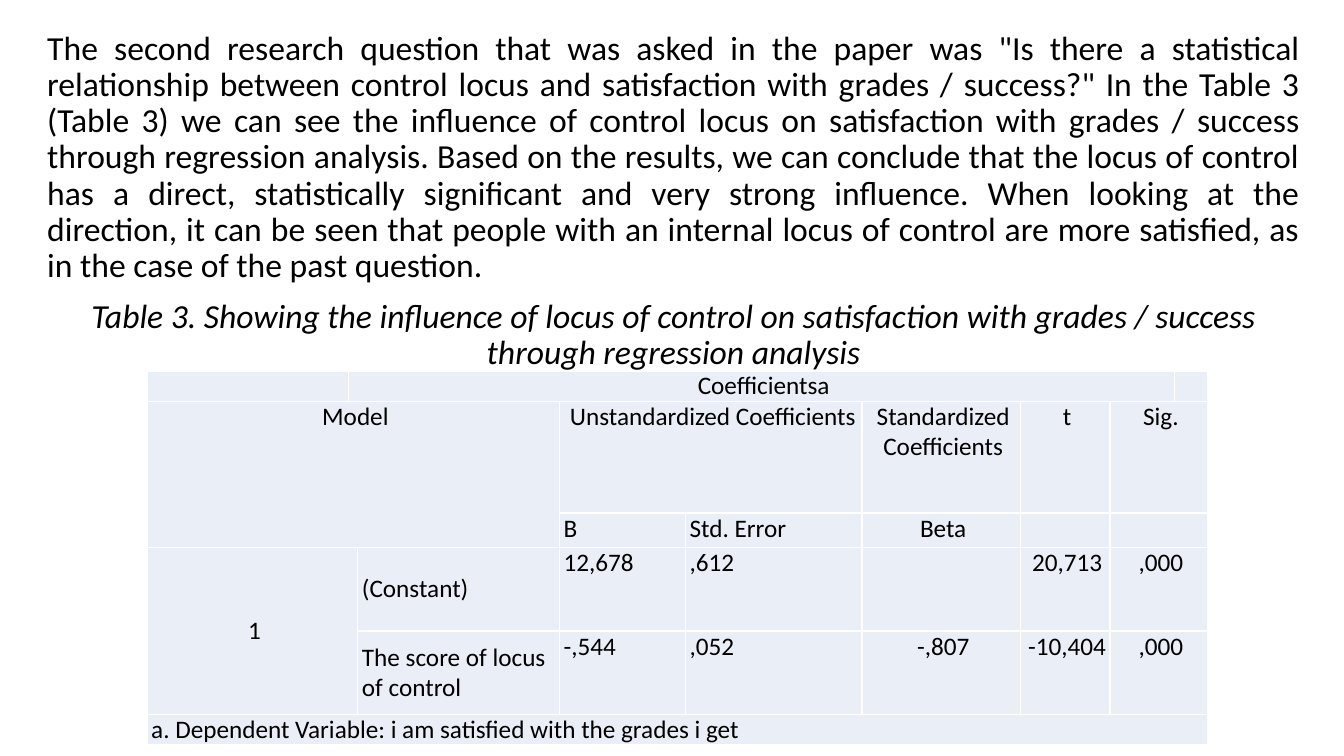
import pptx
import pptx.util
import pptx.dml.color
import pptx.enum.text
import pptx.oxml.ns
import lxml.etree

QUESTION = (
    'The second research question that was asked in the paper was "Is there a statistical '
    'relationship between control locus and satisfaction with grades / success?" In the Table 3 '
    '(Table 3) we can see the influence of control locus on satisfaction with grades / success '
    'through regression analysis. Based on the results, we can conclude that the locus of control '
    'has a direct, statistically significant and very strong influence. When looking at the '
    'direction, it can be seen that people with an internal locus of control are more satisfied, '
    'as in the case of the past question.'
)
CAPTION = (
    "Table 3. Showing the influence of locus of control on satisfaction with grades / success "
    "through regression analysis"
)
COLUMNS = [2, 0.09, 2, 1.25, 1.75, 1.57, 0.89, 0.64, 0.33]
ROWS = [0.25, 1.11, 0.34, 0.83, 0.83, 0.28]

# row, column: text, alignment, vertical anchor
COEFFICIENTS = {
    (0, 1): ("Coefficientsa", "CENTER", "TOP"),
    (1, 0): ("Model", "CENTER", "TOP"),
    (1, 3): ("Unstandardized Coefficients", "CENTER", "TOP"),
    (1, 5): ("Standardized Coefficients", "CENTER", "TOP"),
    (1, 6): ("t", "CENTER", "TOP"),
    (1, 7): ("Sig.", "CENTER", "TOP"),
    (2, 3): ("B", "LEFT", "TOP"),
    (2, 4): ("Std. Error", "LEFT", "TOP"),
    (2, 5): ("Beta", "CENTER", "TOP"),
    (3, 0): ("1", "CENTER", "MIDDLE"),
    (3, 2): ("(Constant)", "LEFT", "MIDDLE"),
    (3, 3): ("12,678", "LEFT", "TOP"),
    (3, 4): (",612", "LEFT", "TOP"),
    (3, 6): ("20,713", "CENTER", "TOP"),
    (3, 7): (",000", "CENTER", "TOP"),
    (4, 2): ("The score of locus of control", "LEFT", "MIDDLE"),
    (4, 3): ("-,544", "LEFT", "TOP"),
    (4, 4): (",052", "LEFT", "TOP"),
    (4, 5): ("-,807", "CENTER", "TOP"),
    (4, 6): ("-10,404", "CENTER", "TOP"),
    (4, 7): (",000", "CENTER", "TOP"),
    (5, 0): ("a. Dependent Variable: i am satisfied with the grades i get", "LEFT", "TOP"),
}
MERGES = [
    ((0, 1), (0, 7)), ((1, 0), (2, 2)), ((1, 3), (1, 4)), ((3, 0), (4, 1)), ((5, 0), (5, 8)),
] + [((row, 7), (row, 8)) for row in range(1, 5)]

INK, PALE, RULE = "000000", "EAEFF7", "FFFFFF"
inches = pptx.util.Inches
align = pptx.enum.text.PP_ALIGN
anchor = pptx.enum.text.MSO_ANCHOR


def paint(color_format, value):
    color_format.rgb = pptx.dml.color.RGBColor.from_string(value)


def write(paragraph, text, size, alignment, italic=None):
    paragraph.alignment = align[alignment]
    run = paragraph.add_run()
    run.text = text
    run.font.size = pptx.util.Pt(size)
    run.font.name = "Calibri"
    run.font.italic = italic
    paint(run.font.color, INK)


def rule_cell(cell):
    properties = cell._tc.get_or_add_tcPr()
    qn = pptx.oxml.ns.qn
    for place, side in enumerate(("lnL", "lnR", "lnT", "lnB")):
        line = lxml.etree.Element(qn("a:" + side), w=str(pptx.util.Pt(1)))
        solid = lxml.etree.SubElement(line, qn("a:solidFill"))
        lxml.etree.SubElement(solid, qn("a:srgbClr"), val=RULE)
        properties.insert(place, line)


def add_discussion(slide):
    frame = slide.shapes.add_textbox(
        inches(0.37), inches(0.26), inches(12.62), inches(4.76)).text_frame
    frame.word_wrap = True
    passages = [(QUESTION, "JUSTIFY", None), (CAPTION, "CENTER", True)]
    for index, (text, alignment, italic) in enumerate(passages):
        paragraph = frame.add_paragraph() if index else frame.paragraphs[0]
        paragraph.line_spacing = 0.9
        paragraph.space_before = pptx.util.Pt(10)
        write(paragraph, text, 24, alignment, italic)


def add_coefficients(slide):
    table = slide.shapes.add_table(
        len(ROWS), len(COLUMNS), inches(1.46), inches(3.68),
        inches(sum(COLUMNS)), inches(sum(ROWS))).table
    table.first_row = table.horz_banding = False
    for column, width in zip(table.columns, COLUMNS):
        column.width = inches(width)
    for row, height in zip(table.rows, ROWS):
        row.height = inches(height)
    for first, last in MERGES:
        table.cell(*first).merge(table.cell(*last))
    for cell in table.iter_cells():
        cell.margin_left = cell.margin_right = cell.margin_top = cell.margin_bottom = 0
        cell.fill.solid()
        paint(cell.fill.fore_color, PALE)
        rule_cell(cell)
    for position, (text, alignment, vertical) in COEFFICIENTS.items():
        cell = table.cell(*position)
        cell.vertical_anchor = anchor[vertical]
        paragraph = cell.text_frame.paragraphs[0]
        write(paragraph, text, 18, alignment)
        paragraph._p.get_or_add_pPr().set("marL", str(inches(0.04)))


def main():
    deck = pptx.Presentation()
    deck.slide_width, deck.slide_height = inches(13.33), inches(7.5)
    slide = deck.slides.add_slide(deck.slide_layouts[6])
    add_discussion(slide)
    add_coefficients(slide)
    deck.save("out.pptx")


if __name__ == "__main__":
    main()
